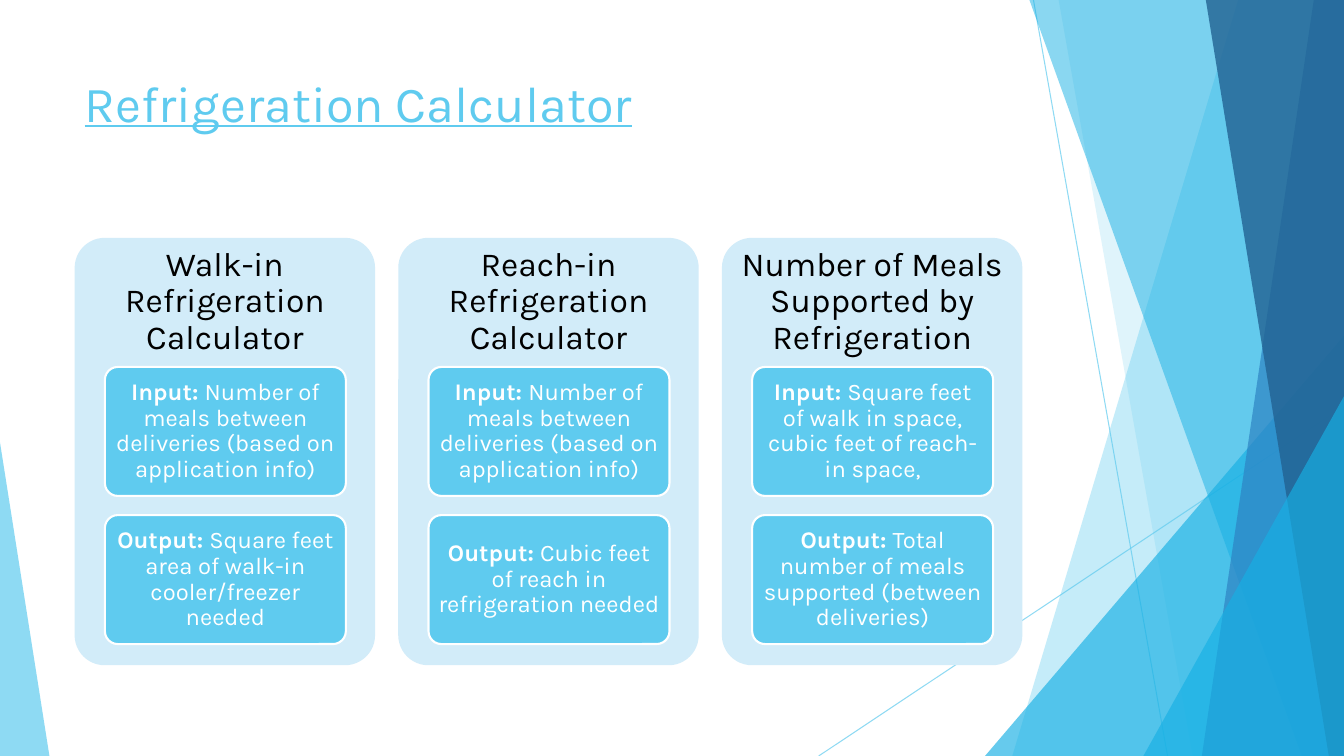
from pptx import Presentation
from pptx.dml.color import RGBColor
from pptx.enum import shapes, text
from pptx.oxml.ns import qn
from pptx.util import Inches, Pt
from lxml import etree

WIDTH, HEIGHT = 13.33, 7.5
FONT = "Karla"
COLORS = {
    "sky": "5FCBEF", "cyan": "17B0E4", "blue": "2E83C3", "navy": "226292",
    "panel": "D2ECF9", "white": "FFFFFF", "black": "000000",
}
# Heading, input and output of each calculator
CALCULATORS = [
    ("Walk-in Refrigeration Calculator",
     "Number of meals between deliveries (based on application info)",
     "Square feet area of walk-in cooler/freezer needed"),
    ("Reach-in Refrigeration Calculator",
     "Number of meals between deliveries (based on application info)",
     "Cubic feet of reach in refrigeration needed"),
    ("Number of Meals Supported by Refrigeration",
     "Square feet of walk in space, cubic feet of reach-in space,",
     "Total number of meals supported (between deliveries)"),
]


def rgb(name):
    return RGBColor.from_string(COLORS[name])


def set_alpha(color_format_parent, percent):
    color = color_format_parent.find(".//" + qn("a:srgbClr"))
    etree.SubElement(color, qn("a:alpha")).set("val", str(percent * 1000))


def paint(shape, color, alpha=100):
    shape.shadow.inherit = False
    shape.fill.solid()
    shape.fill.fore_color.rgb = rgb(color)
    shape.line.fill.background()
    if alpha < 100:
        set_alpha(shape._element.spPr.find(qn("a:solidFill")), alpha)


def add_thin_line(slide, start, end):
    points = [Inches(value) for value in (*start, *end)]
    line = slide.shapes.add_connector(shapes.MSO_CONNECTOR.STRAIGHT, *points)
    line.line.color.rgb = rgb("sky")
    line.line.width = Pt(0.75)
    properties = line._element.spPr
    set_alpha(properties.find(qn("a:ln")), 70)
    etree.SubElement(properties, qn("a:effectLst"))


def add_facet(slide, top_x, bottom_x, color, alpha):
    """Slanted band that reaches the right edge of the slide."""
    corners = [(WIDTH, 0), (WIDTH, HEIGHT), (bottom_x, HEIGHT)]
    builder = slide.shapes.build_freeform(Inches(top_x), 0)
    builder.add_line_segments([(Inches(x), Inches(y)) for x, y in corners])
    paint(builder.convert_to_shape(), color, alpha)


def add_triangle(slide, left, top, width, apex, color, alpha):
    """Triangle that stands on the bottom edge of the slide."""
    triangle = slide.shapes.add_shape(
        shapes.MSO_SHAPE.ISOSCELES_TRIANGLE, Inches(left), Inches(top),
        Inches(width), Inches(HEIGHT - top))
    triangle.adjustments[0] = apex
    paint(triangle, color, alpha)


def add_rounded_box(slide, left, top, width, height, color):
    box = slide.shapes.add_shape(
        shapes.MSO_SHAPE.ROUNDED_RECTANGLE, Inches(left), Inches(top),
        Inches(width), Inches(height))
    box.adjustments[0] = 0.1
    paint(box, color)
    return box


def format_centered(frame, size, color, margin_x, margin_y):
    frame.word_wrap = True
    frame.vertical_anchor = text.MSO_ANCHOR.MIDDLE
    frame.margin_left = frame.margin_right = Inches(margin_x)
    frame.margin_top = frame.margin_bottom = Inches(margin_y)
    paragraph = frame.paragraphs[0]
    paragraph.alignment = text.PP_ALIGN.CENTER
    paragraph.line_spacing = 0.9
    paragraph.font.name = FONT
    paragraph.font.size = Pt(size)
    paragraph.font.color.rgb = rgb(color)
    return paragraph


def add_step(slide, left, top, label, description):
    box = add_rounded_box(slide, left, top, 2.39, 1.28, "sky")
    box.line.color.rgb = rgb("white")
    box.line.width = Pt(1.5)
    paragraph = format_centered(box.text_frame, 17, "white", 0.05, 0.04)
    label_run = paragraph.add_run()
    label_run.text = label + ": "
    label_run.font.bold = True
    paragraph.add_run().text = description


def add_calculator(slide, left, heading, input_text, output_text):
    top, width = 2.36, 2.98
    add_rounded_box(slide, left, top, width, 4.24, "panel")
    heading_box = slide.shapes.add_textbox(
        Inches(left), Inches(top), Inches(width), Inches(1.27))
    paragraph = format_centered(heading_box.text_frame, 24, "black", 0.1, 0.1)
    paragraph.add_run().text = heading
    add_step(slide, left + 0.3, 3.64, "Input", input_text)
    add_step(slide, left + 0.3, 5.11, "Output", output_text)


def add_background(slide):
    add_thin_line(slide, (10.25, 0), (11.58, HEIGHT))
    add_thin_line(slide, (WIDTH, 4.03), (8.12, HEIGHT))
    add_facet(slide, 12.28, 10.04, "sky", 36)
    add_facet(slide, 10.5, 11.83, "sky", 20)
    add_triangle(slide, 9.77, 3.33, 3.56, 1, "cyan", 66)
    add_facet(slide, 10.21, 12.91, "cyan", 50)
    add_facet(slide, 13.03, 11.92, "blue", 70)
    add_facet(slide, 11.96, 13.18, "navy", 80)
    add_triangle(slide, 11.34, 3.93, 1.99, 1, "cyan", 66)
    add_triangle(slide, 0, 4.39, 0.49, 0, "sky", 70)


def set_title(slide, wording):
    title = slide.shapes.title
    title.left, title.top = Inches(0.74), Inches(0.67)
    title.width, title.height = Inches(9.4), Inches(1.44)
    frame = title.text_frame
    frame.text = wording
    frame.auto_size = text.MSO_AUTO_SIZE.NONE
    frame.vertical_anchor = text.MSO_ANCHOR.TOP
    paragraph = frame.paragraphs[0]
    paragraph.alignment = text.PP_ALIGN.LEFT
    paragraph.font.name = FONT
    paragraph.font.size = Pt(36)
    paragraph.font.underline = True
    paragraph.font.color.rgb = rgb("sky")


def main():
    presentation = Presentation()
    presentation.slide_width = Inches(WIDTH)
    presentation.slide_height = Inches(HEIGHT)
    slide = presentation.slides.add_slide(presentation.slide_layouts[5])

    # Decoration and title
    add_background(slide)
    set_title(slide, "Refrigeration Calculator")

    # One panel per calculator
    for index, calculator in enumerate(CALCULATORS):
        add_calculator(slide, 0.74 + 3.21 * index, *calculator)

    presentation.save("out.pptx")


if __name__ == "__main__":
    main()
